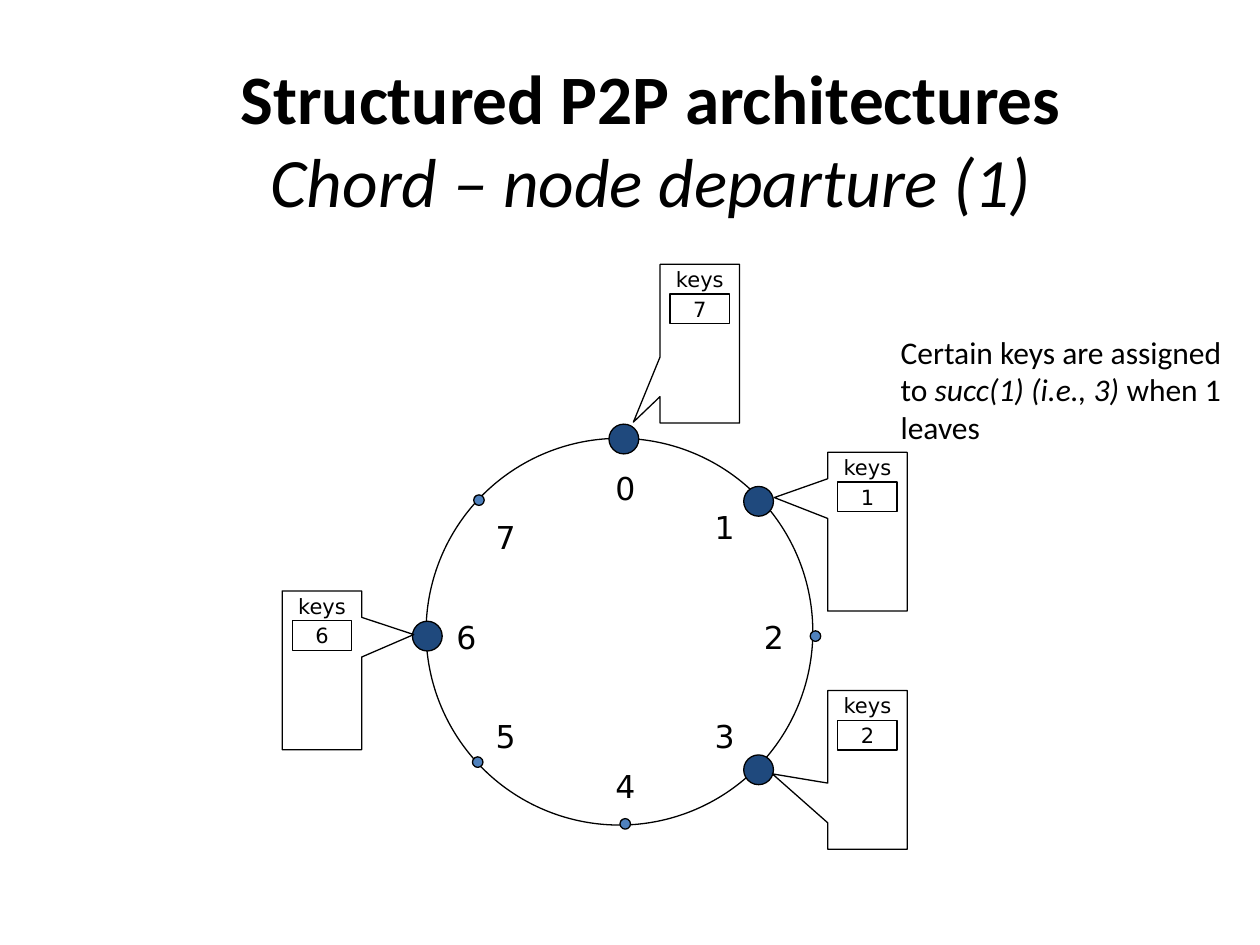
import pptx
import pptx.util
import pptx.dml.color
import pptx.enum.shapes
import pptx.enum.text

Pt = pptx.util.Pt
KIND = pptx.enum.shapes.MSO_SHAPE
ALIGN = pptx.enum.text.PP_ALIGN
MID = pptx.enum.text.MSO_ANCHOR.MIDDLE
HEX = {"ink": "000000", "dot": "4F81BD", "node": "1F497D"}
MONO, SANS = "DejaVu Sans", "Calibri"
FLAT = {"margin_left": 0, "margin_right": 0, "margin_top": 0,
        "margin_bottom": 0, "vertical_anchor": MID, "word_wrap": False}
WRAP = {"word_wrap": True}

NODES = [
    ((113, 0.4), (113.8, 28.4)),
    ((190, 36), (170.6, 50.8)),
    ((222.5, 113), (198.7, 113.4)),
    ((190, 189.4), (170.6, 170.3)),
    ((113.8, 220.3), (113.8, 198.4)),
    ((29.5, 185), (45.4, 170.3)),
    ((0.7, 113), (23, 113.4)),
    ((30.2, 35.3), (45.4, 56.5)),
]
LIVE = {0, 1, 3, 6}
CARDS = [
    ("1", (473, 258.5), (-1.172, -0.215)),
    ("2", (473, 394.6), (-1.197, 0.025)),
    ("7", (377.2, 151.1), (-0.836, 0.494)),
    ("6", (161.3, 337.7), (1.156, -0.225)),
]


def color(name):
    """Return the named colour."""
    return pptx.dml.color.RGBColor.from_string(HEX[name])


def apply(item, form):
    """Set each attribute of the item from the dict."""
    for key, value in form.items():
        setattr(item, key, value)


def write(shape, runs, form, font, align=ALIGN.CENTER):
    """Fill the shape with one paragraph of formatted runs."""
    frame = shape.text_frame
    apply(frame, form)
    para = frame.paragraphs[0]
    para.alignment = align
    for text, style in runs:
        if text == "\n":
            para.add_line_break()
            continue
        run = para.add_run()
        run.text = text
        apply(run.font, {**font, **style})
        run.font.color.rgb = color("ink")


def draw(slide, kind, box, fill=None):
    """Add an outlined shape, filled if a colour is named."""
    shape = slide.shapes.add_shape(kind, *map(Pt, box))
    shape.shadow.inherit = False
    shape.line.color.rgb = color("ink")
    shape.line.width = Pt(0.75)
    if fill:
        shape.fill.solid()
        shape.fill.fore_color.rgb = color(fill)
    else:
        shape.fill.background()
    return shape


def label(slide, box, text, size):
    """Add a centred label."""
    shape = slide.shapes.add_textbox(*map(Pt, box))
    write(shape, [(text, {})], FLAT, {"name": MONO, "size": Pt(size)})


def ring(slide, box):
    """Draw the ring with its numbered nodes."""
    left, top = box[:2]
    draw(slide, KIND.OVAL, box)
    for num, (spot, tag) in enumerate(NODES):
        size, fill = (17, "node") if num in LIVE else (6, "dot")
        x, y = left + spot[0] - size / 2, top + spot[1] - size / 2
        draw(slide, KIND.OVAL, (x, y, size, size), fill)
        x, y = left + tag[0] - 11.5, top + tag[1] - 11.2
        label(slide, (x, y, 23, 22.4), str(num), 18)


def card(slide, box, key, tip):
    """Draw a callout that lists the key held by a node."""
    left, top, width, _ = box
    call = draw(slide, KIND.RECTANGULAR_CALLOUT, box)
    call.adjustments[0], call.adjustments[1] = tip
    row = (left + 5.7, top, width - 11.4, 17)
    label(slide, row, "keys", 12)
    cell = draw(slide, KIND.RECTANGLE, (row[0], top + 17, *row[2:]))
    write(cell, [(key, {})], FLAT, {"name": MONO, "size": Pt(12)})


def title(slide, box):
    """Add the two-line title."""
    shape = slide.shapes.add_textbox(*map(Pt, box))
    runs = [("Structured P2P architectures", {"bold": True}), ("\n", {}),
            ("Chord – node departure (1)", {"italic": True})]
    write(shape, runs, {**WRAP, "vertical_anchor": MID},
          {"name": SANS, "size": Pt(39.6)})


def note(slide, box):
    """Add the remark beside the ring."""
    shape = slide.shapes.add_textbox(*map(Pt, box))
    runs = [("Certain keys are assigned to ", {}),
            ("succ(1) (i.e., 3) ", {"italic": True}), ("when 1 leaves", {})]
    write(shape, runs, WRAP, {"name": SANS, "size": Pt(18)}, ALIGN.LEFT)


def main():
    """Build and save the slide."""
    deck = pptx.Presentation()
    apply(deck, {"slide_width": Pt(720), "slide_height": Pt(540)})
    slide = deck.slides.add_slide(deck.slide_layouts[6])
    ring(slide, (243.5, 250.5, 221, 221))
    for key, spot, tip in CARDS:
        card(slide, (*spot, 45.4, 90.7), key, tip)
    title(slide, (48, 34, 648, 90))
    note(slide, (507.6, 186.5, 204.5, 72.7))
    deck.save("out.pptx")


if __name__ == "__main__":
    main()
